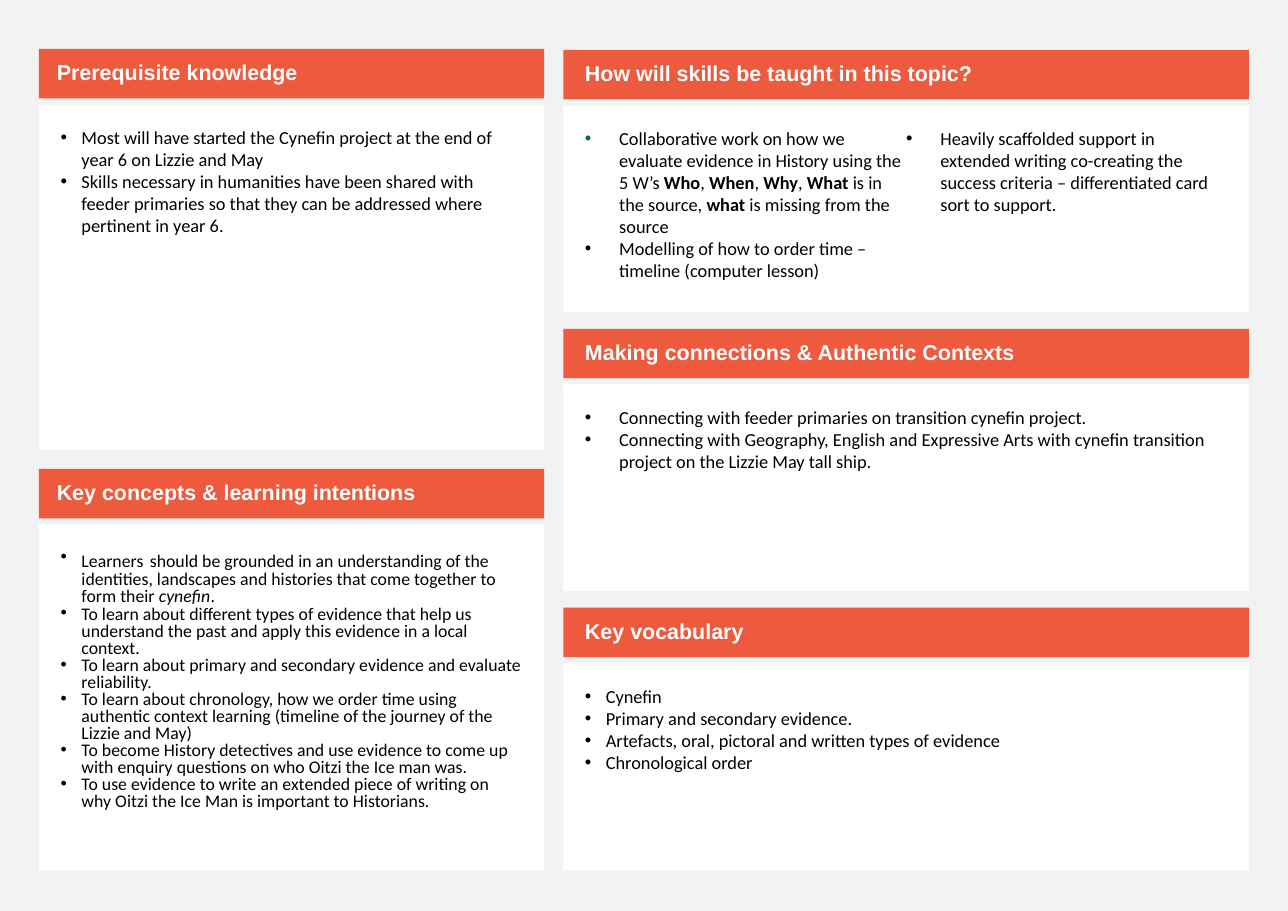
from dataclasses import dataclass

from lxml import etree
from pptx import Presentation
from pptx.dml.color import RGBColor
from pptx.enum.shapes import MSO_SHAPE
from pptx.enum.text import MSO_ANCHOR, PP_ALIGN
from pptx.oxml.ns import qn
from pptx.util import Cm, Pt

RECTANGLE = MSO_SHAPE.RECTANGLE
TOP, MIDDLE = MSO_ANCHOR.TOP, MSO_ANCHOR.MIDDLE
LEFT = PP_ALIGN.LEFT


@dataclass(frozen=True)
class Theme:
    background: str = "F2F2F2"
    panel: str = "FFFFFF"
    accent: str = "ED5A3E"
    heading_text: str = "FFFFFF"
    body_text: str = "000000"
    teal: str = "00685E"
    heading_font: str = "Arial"
    body_font: str = "Calibri"
    heading_size: float = 14
    body_size: float = 12
    compact_size: float = 11.6
    wide_space_size: float = 17.8


THEME = Theme()

HEADING_HEIGHT = 1.14
BODY_OFFSET = 1.28
BODY_INSET = 0.5
NARROW_INDENT, WIDE_INDENT = 0.48, 0.79
BOLD = {"bold": True}

PREREQUISITES = [
    "Most will have started the Cynefin project at the end of year 6 on Lizzie and May",
    "Skills necessary in humanities have been shared with feeder primaries so that "
    "they can be addressed where pertinent in year 6.",
]
CONCEPTS = [
    [
        ("Learners", {}),
        (" ", {"size": THEME.wide_space_size}),
        ("should be grounded in an understanding of the identities, landscapes and "
         "histories that come together to form their ", {}),
        ("cynefin", {"italic": True}),
        (".", {}),
    ],
    "To learn about different types of evidence that help us understand the past "
    "and apply this evidence in a local context.",
    "To learn about primary and secondary evidence and evaluate reliability.",
    "To learn about chronology, how we order time using authentic context learning "
    "(timeline of the journey of the Lizzie and May)",
    "To become History detectives and use evidence to come up with enquiry "
    "questions on who Oitzi the Ice man was.",
    "To use evidence to write an extended piece of writing on why Oitzi the Ice Man "
    "is important to Historians.",
]
SKILLS = [
    [
        ("Collaborative work on how we evaluate evidence in History using the 5 W’s ", {}),
        ("Who", BOLD), (", ", {}),
        ("When", BOLD), (", ", {}),
        ("Why", BOLD), (", ", {}),
        ("What", BOLD), (" is in the source, ", {}),
        ("what", BOLD), (" is missing from the source", {}),
    ],
    "Modelling of how to order time – timeline (computer lesson)",
    "Heavily scaffolded support in extended writing co-creating the success "
    "criteria – differentiated card sort to support.",
]
CONNECTIONS = [
    "Connecting with feeder primaries on transition cynefin project.",
    "Connecting with Geography, English and Expressive Arts with cynefin transition "
    "project on the Lizzie May tall ship.",
]
VOCABULARY = [
    "Cynefin",
    "Primary and secondary evidence.",
    "Artefacts, oral, pictoral and written types of evidence",
    "Chronological order",
]


def add_text(paragraph, text, *, font, size, color, bold=False, italic=False):
    run = paragraph.add_run()
    run.text = text
    run.font.name = font
    run.font.size = Pt(size)
    run.font.color.rgb = RGBColor.from_string(color)
    run.font.bold = bold
    run.font.italic = italic


def add_block(slide, box, fill, insets, anchor):
    """Add a plain filled rectangle and return its text frame."""
    shape = slide.shapes.add_shape(RECTANGLE, *(Cm(length) for length in box))
    shape.shadow.inherit = False
    shape.fill.solid()
    shape.fill.fore_color.rgb = RGBColor.from_string(fill)
    shape.line.fill.background()
    frame = shape.text_frame
    frame.word_wrap = True
    frame.vertical_anchor = anchor
    frame.margin_left, frame.margin_top, frame.margin_right, frame.margin_bottom = (
        Cm(inset) for inset in insets
    )
    return frame


def set_bullet(paragraph, indent, color):
    properties = paragraph._p.get_or_add_pPr()
    properties.set("marL", str(Cm(indent)))
    properties.set("indent", str(-Cm(indent)))
    bullet_color = etree.SubElement(properties, qn("a:buClr"))
    etree.SubElement(bullet_color, qn("a:srgbClr"), val=color)
    etree.SubElement(properties, qn("a:buFont"), typeface="Arial")
    etree.SubElement(properties, qn("a:buChar"), char="•")


def add_heading(slide, box, title, inset):
    frame = add_block(slide, box, THEME.accent, (inset, 0.13, 0.25, 0.13), MIDDLE)
    paragraph = frame.paragraphs[0]
    paragraph.alignment = LEFT
    paragraph.line_spacing = 0.9
    add_text(paragraph, title, font=THEME.heading_font, size=THEME.heading_size,
             color=THEME.heading_text, bold=True)


def add_bullets(slide, box, items, *, indent, size=THEME.body_size, spacing=1.0,
                columns=1, first_bullet=THEME.body_text):
    frame = add_block(slide, box, THEME.panel, (BODY_INSET,) * 4, TOP)
    if columns > 1:
        frame._txBody.bodyPr.set("numCol", str(columns))
    for index, item in enumerate(items):
        paragraph = frame.add_paragraph() if index else frame.paragraphs[0]
        paragraph.alignment = LEFT
        paragraph.line_spacing = spacing
        set_bullet(paragraph, indent, THEME.body_text if index else first_bullet)
        runs = [(item, {})] if isinstance(item, str) else item
        for text, changes in runs:
            style = {"font": THEME.body_font, "size": size, "color": THEME.body_text}
            add_text(paragraph, text, **(style | changes))


def add_column(slide, box, pitch, heading_inset, sections):
    """Stack headed panels; box gives left, top, width and height of one section."""
    left, top, width, height = box
    for index, (title, items, options) in enumerate(sections):
        y = top + index * pitch
        add_heading(slide, (left, y, width, HEADING_HEIGHT), title, heading_inset)
        body = (left, y + BODY_OFFSET, width, height - BODY_OFFSET)
        add_bullets(slide, body, items, **options)


def main():
    presentation = Presentation()
    presentation.slide_width, presentation.slide_height = Cm(29.7), Cm(21)
    slide = presentation.slides.add_slide(presentation.slide_layouts[6])
    slide.background.fill.solid()
    slide.background.fill.fore_color.rgb = RGBColor.from_string(THEME.background)

    add_column(slide, (0.9, 1.13, 11.65, 9.25), 9.68, 0.41, [
        ("Prerequisite knowledge", PREREQUISITES, {"indent": NARROW_INDENT}),
        ("Key concepts & learning intentions", CONCEPTS,
         {"indent": NARROW_INDENT, "size": THEME.compact_size, "spacing": 0.8}),
    ])
    add_column(slide, (12.99, 1.15, 15.81, 6.05), 6.43, BODY_INSET, [
        ("How will skills be taught in this topic?", SKILLS,
         {"indent": WIDE_INDENT, "columns": 2, "first_bullet": THEME.teal}),
        ("Making connections & Authentic Contexts", CONNECTIONS, {"indent": WIDE_INDENT}),
        ("Key vocabulary", VOCABULARY, {"indent": NARROW_INDENT}),
    ])
    presentation.save("out.pptx")


if __name__ == "__main__":
    main()
